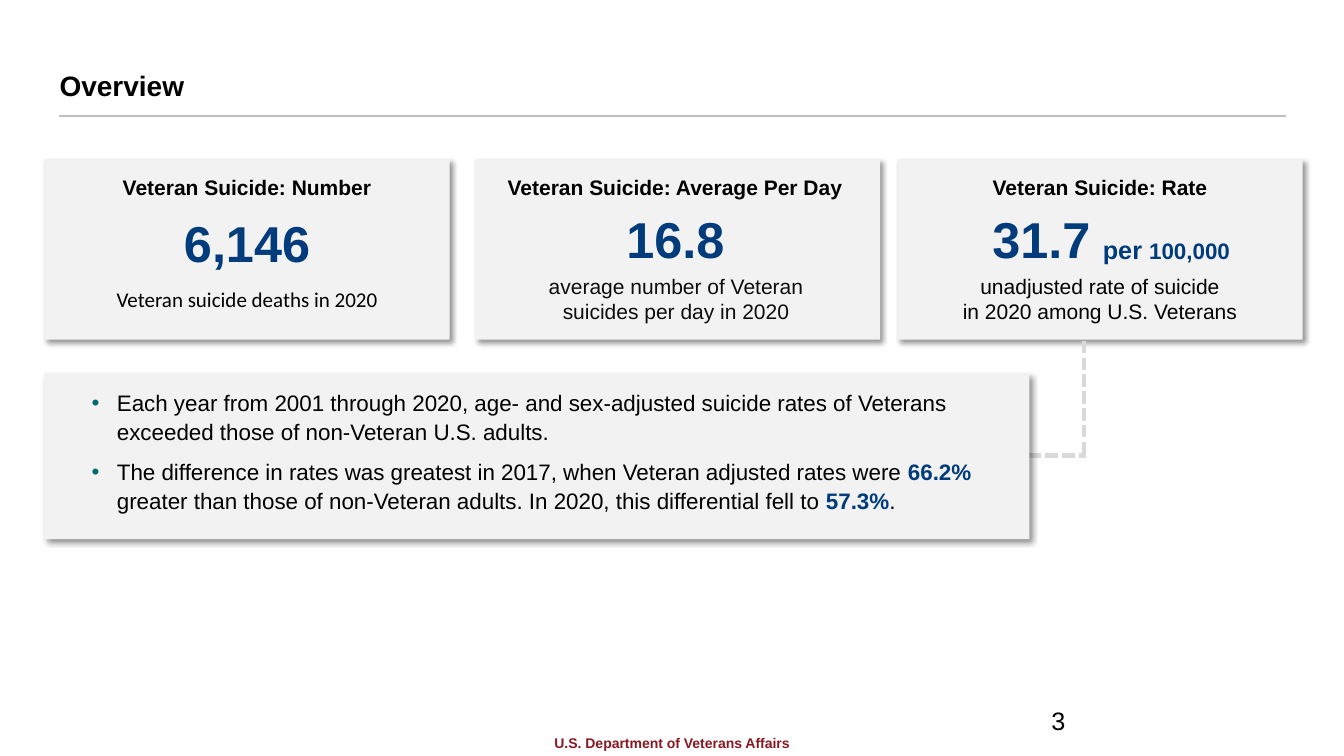
"""Build the overview slide on Veteran suicide figures."""
from lxml import etree
from pptx import Presentation, util as u
from pptx.dml.color import RGBColor
from pptx.enum import dml, shapes, text
from pptx.oxml.ns import qn

HUES = {"ink": "000000", "soft": "0D0D0D", "blue": "003B7B", "red": "871923",
        "teal": "006A71", "card": "F2F2F2", "rule": "BFBFBF", "dash": "D9D9D9"}
TOP, WIDE, HIGH = 1.58, 4.02, 1.79
LEFT, MID, RIGHT = 0.44, 4.71, 8.9
PANEL = (LEFT, 3.7, 9.77, 1.65)
SNUG = (0.07, 0.04)

HEADS = [
    (LEFT, WIDE, "Veteran Suicide: Number"),
    (4.66, 4.07, "Veteran Suicide: Average Per Day"),
    (RIGHT, WIDE, "Veteran Suicide: Rate"),
]
STATS = [
    (LEFT, 2.06, WIDE, "6,146"),
    (4.67, 2.02, 4.06, "16.8"),
    (9.23, 2.02, 2.2, "31.7"),
]
NOTES = [
    ((LEFT, 2.8, WIDE, 0.33), "Veteran suicide deaths in\u00a02020", "ink", "Calibri"),
    ((4.83, 2.67, 3.75, 0.58),
     "average number\u00a0of Veteran suicides\u00a0per day in 2020", "soft", "Arial"),
    ((RIGHT, 2.67, WIDE, 0.58),
     "unadjusted rate of suicide\nin 2020 among U.S. Veterans", "ink", "Arial"),
]
UNIT = [("per ", 18, "blue", True), ("100,000", 16, "blue", True)]
POINTS = [
    [("Each year from 2001 through 2020, age- and sex-adjusted suicide rates of "
      "Veterans exceeded those of non-Veteran U.S. adults.", 16, "ink", False)],
    [("The difference in rates was greatest in 2017, when Veteran adjusted rates were ",
      16, "ink", False),
     ("66.2%", 16, "blue", True),
     (" greater than those of non-Veteran adults. In 2020, this differential fell to ",
      16, "ink", False),
     ("57.3%", 16, "blue", True),
     (".", 16, "ink", False)],
]
LINES = [
    ((0.59, 1.15), (12.75, 1.15), "rule", 1, False),
    ((10.2, 4.52), (10.77, 4.52), "dash", 3, True),
    ((10.75, 3.38), (10.75, 4.5), "dash", 3, True),
]


def hue(name):
    return RGBColor.from_string(HUES[name])


def place(vals):
    return [u.Inches(v) for v in vals]


def write(para, runs, font="Arial"):
    for words, size, color, bold in runs:
        for i, part in enumerate(words.split("\n")):
            if i:
                para.add_line_break()
            run = para.add_run()
            run.text = part
            run.font.name, run.font.size, run.font.bold = font, u.Pt(size), bold
            run.font.color.rgb = hue(color)


def inset(frame, side, edge):
    frame.margin_left = frame.margin_right = u.Inches(side)
    frame.margin_top = frame.margin_bottom = u.Inches(edge)


def label(slide, box, runs, font="Arial", mid=True, pad=(0.1, 0.05)):
    frame = slide.shapes.add_textbox(*place(box)).text_frame
    frame.word_wrap = True
    inset(frame, *pad)
    para = frame.paragraphs[0]
    para.alignment = text.PP_ALIGN.CENTER if mid else text.PP_ALIGN.LEFT
    write(para, runs, font)
    return frame


def card(slide, box):
    rect = slide.shapes.add_shape(shapes.MSO_SHAPE.RECTANGLE, *place(box))
    rect.fill.solid()
    rect.fill.fore_color.rgb = hue("card")
    rect.line.fill.background()
    rect.shadow.inherit = False
    glow = rect.fill._xPr.find(qn("a:effectLst"))
    cast = etree.SubElement(glow, qn("a:outerShdw"), blurRad=str(u.Pt(4)),
                            dist=str(u.Pt(3)), dir="2700000", algn="tl", rotWithShape="0")
    tint = etree.SubElement(cast, qn("a:srgbClr"), val=HUES["ink"])
    etree.SubElement(tint, qn("a:alpha"), val="40000")


def stroke(slide, start, end, color, width, dashed):
    line = slide.shapes.add_connector(shapes.MSO_CONNECTOR.STRAIGHT, *place(start + end))
    line.line.color.rgb = hue(color)
    line.line.width = u.Pt(width)
    if dashed:
        line.line.dash_style = dml.MSO_LINE.SQUARE_DOT
    etree.SubElement(line._element.spPr, qn("a:effectLst"))


def bullet(para):
    props = para._p.get_or_add_pPr()
    props.set("marL", str(u.Inches(0.56)))
    props.set("indent", str(u.Inches(-0.25)))
    tint = etree.SubElement(props, qn("a:buClr"))
    etree.SubElement(tint, qn("a:srgbClr"), val=HUES["teal"])
    etree.SubElement(props, qn("a:buFont"), typeface="Arial")
    etree.SubElement(props, qn("a:buChar"), char="•")
    para.line_spacing = 1.07


def main():
    deck = Presentation()
    deck.slide_width, deck.slide_height = place((13.33, 7.5))
    slide = deck.slides.add_slide(deck.slide_layouts[5])

    title = slide.shapes.title
    title.left, title.top, title.width, title.height = place((0.59, 0.37, 11.14, 0.7))
    frame = title.text_frame
    frame.vertical_anchor = text.MSO_ANCHOR.BOTTOM
    inset(frame, 0, 0.05)
    head = frame.paragraphs[0]
    head.alignment, head.line_spacing = text.PP_ALIGN.LEFT, 0.9
    write(head, [("Overview", 20, "ink", True)])

    foot = label(slide, (5, 7.27, 3.33, 0.2),
                 [("U.S. Department of Veterans Affairs", 10, "red", True)], pad=(0, 0.05))
    foot.vertical_anchor = text.MSO_ANCHOR.MIDDLE
    label(slide, (10.33, 6.95, 3, 0.4), [("3", 18, "ink", False)], mid=False)

    for x in (LEFT, MID, RIGHT):
        card(slide, (x, TOP, WIDE, HIGH))
    for line in LINES:
        stroke(slide, *line)
    card(slide, PANEL)

    for x, wide, words in HEADS:
        label(slide, (x, 1.68, wide, 0.35), [(words, 15, "ink", True)])
    for x, y, wide, words in STATS:
        label(slide, (x, y, wide, 0.71), [(words, 36, "blue", True)])
    for box, words, color, font in NOTES:
        label(slide, box, [(words, 15, color, False)], font, pad=SNUG)
    label(slide, (10.84, 2.28, 1.91, 0.4), UNIT, mid=False)

    body = label(slide, (0.53, 3.8, 9.57, 1.48), [], mid=False, pad=SNUG)
    for i, runs in enumerate(POINTS):
        para = body.add_paragraph() if i else body.paragraphs[0]
        bullet(para)
        if i:
            para.space_before = u.Pt(8.6)
        write(para, runs)

    deck.save("out.pptx")


if __name__ == "__main__":
    main()
